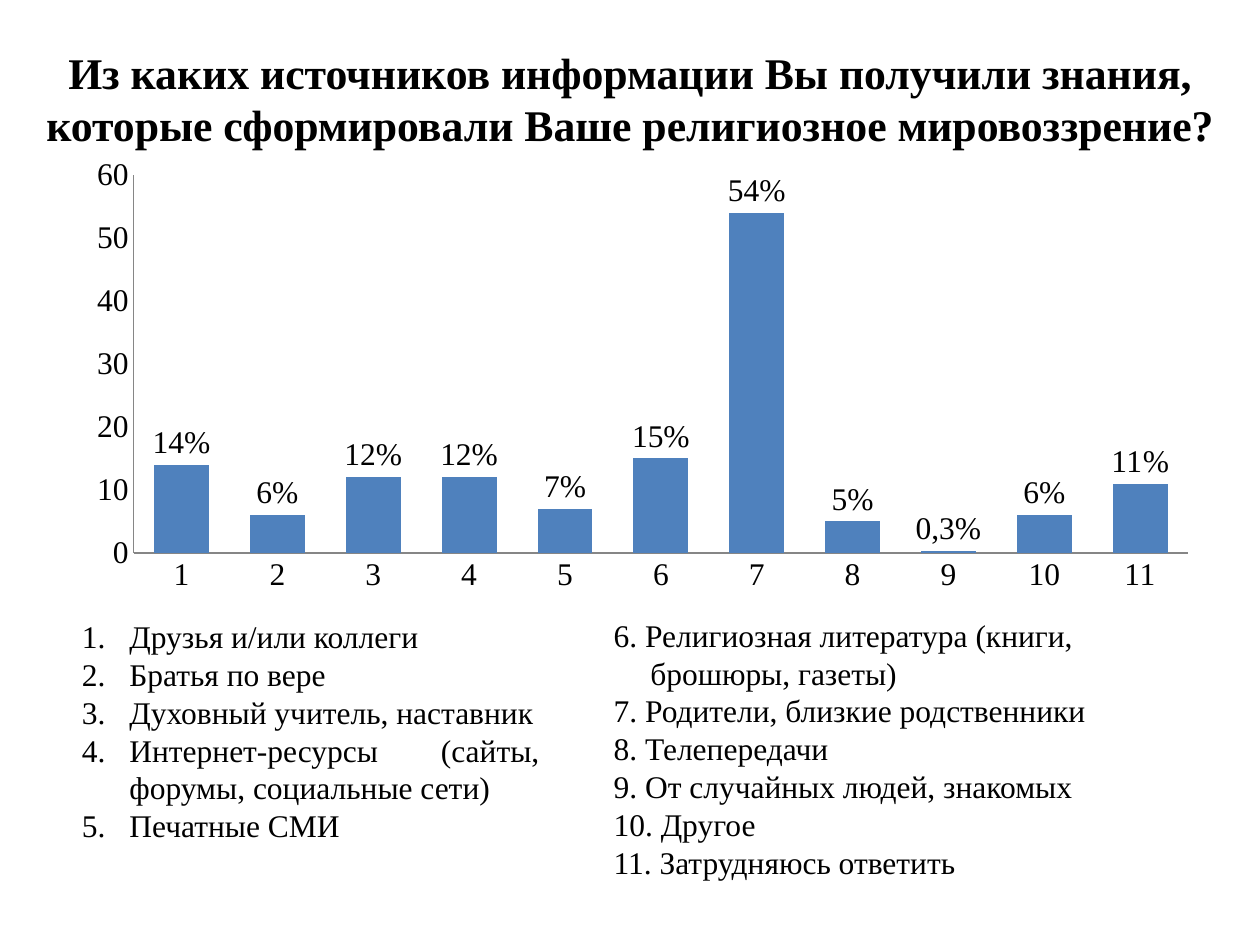
from dataclasses import dataclass

from lxml import etree
from pptx import Presentation
from pptx.chart.data import CategoryChartData
from pptx.dml.color import RGBColor
from pptx.enum.chart import XL_CHART_TYPE, XL_LABEL_POSITION, XL_TICK_MARK
from pptx.enum.text import MSO_ANCHOR, PP_ALIGN
from pptx.oxml.ns import qn
from pptx.util import Cm, Pt

COLUMNS = XL_CHART_TYPE.COLUMN_CLUSTERED
OUTSIDE = XL_LABEL_POSITION.OUTSIDE_END
NO_TICKS = XL_TICK_MARK.NONE
TOP, MIDDLE = MSO_ANCHOR.TOP, MSO_ANCHOR.MIDDLE
LEFT, CENTER, JUSTIFY = PP_ALIGN.LEFT, PP_ALIGN.CENTER, PP_ALIGN.JUSTIFY


@dataclass(frozen=True)
class Theme:
    font: str = "Times New Roman"
    title_size: Pt = Pt(25)
    body_size: Pt = Pt(18)
    text: RGBColor = RGBColor(0, 0, 0)
    bar: RGBColor = RGBColor(0x4F, 0x81, 0xBD)
    axis: RGBColor = RGBColor(0x86, 0x86, 0x86)


THEME = Theme()

TITLE = [
    "Из каких источников информации Вы получили знания,",
    "которые сформировали Ваше религиозное мировоззрение?",
]
SHARES = [14, 6, 12, 12, 7, 15, 54, 5, 0.3, 6, 11]
FIRST_SOURCES = [
    "Друзья и/или коллеги",
    "Братья по вере",
    "Духовный учитель, наставник",
    "Интернет-ресурсы (сайты, форумы, социальные сети)",
    "Печатные СМИ",
]
OTHER_SOURCES = [
    "6. Религиозная литература (книги, брошюры, газеты)",
    "7. Родители, близкие родственники",
    "8. Телепередачи",
    "9. От случайных людей, знакомых",
    "10. Другое",
    "11. Затрудняюсь ответить",
]


def style_font(font, size, bold=False):
    font.name = THEME.font
    font.size = size
    font.bold = bold
    font.color.rgb = THEME.text


def add_text(page, place, lines, size, align, anchor=TOP, bold=False):
    """Add a text box with one paragraph per line and return its paragraphs."""
    frame = page.shapes.add_textbox(*place).text_frame
    frame.word_wrap = True
    frame.vertical_anchor = anchor
    for index, line in enumerate(lines):
        para = frame.paragraphs[0] if index == 0 else frame.add_paragraph()
        para.alignment = align
        span = para.add_run()
        span.text = line
        style_font(span.font, size, bold)
    return frame.paragraphs


def hang(para, indent, numbered=False):
    """Give a paragraph a hanging indent, with automatic numbers if wanted."""
    properties = para._p.get_or_add_pPr()
    properties.set("marL", str(indent))
    properties.set("indent", str(-indent))
    if numbered:
        etree.SubElement(properties, qn("a:buFont"), typeface="+mj-lt")
        etree.SubElement(properties, qn("a:buAutoNum"), type="arabicPeriod")


def style_axis(axis):
    axis.has_major_gridlines = False
    axis.major_tick_mark = NO_TICKS
    axis.minor_tick_mark = NO_TICKS
    axis.format.line.color.rgb = THEME.axis
    axis.format.line.width = Pt(0.75)


def add_share_chart(page, place):
    data = CategoryChartData()
    data.categories = [str(number) for number in range(1, len(SHARES) + 1)]
    data.add_series("Series 1", SHARES)
    chart = page.shapes.add_chart(COLUMNS, *place, data).chart
    chart.has_legend = False
    chart.has_title = False
    style_font(chart.font, THEME.body_size)

    style_axis(chart.category_axis)
    style_axis(chart.value_axis)
    chart.value_axis.minimum_scale = 0
    chart.value_axis.maximum_scale = 60
    chart.value_axis.major_unit = 10

    plot = chart.plots[0]
    plot.gap_width = 75
    plot.vary_by_categories = False
    series = plot.series[0]
    series.format.fill.solid()
    series.format.fill.fore_color.rgb = THEME.bar
    series.data_labels.show_value = True
    series.data_labels.position = OUTSIDE
    for index, share in enumerate(SHARES):
        label = series.points[index].data_label
        span = label.text_frame.paragraphs[0].add_run()
        span.text = f"{share}%".replace(".", ",")
        style_font(span.font, THEME.body_size)
        label.position = OUTSIDE


def main():
    deck = Presentation()
    deck.slide_width, deck.slide_height = Cm(25.4), Cm(19.05)
    page = deck.slides.add_slide(deck.slide_layouts[6])

    add_text(page, (Cm(0), Cm(0.79), Cm(25.4), Cm(2.39)), TITLE,
             THEME.title_size, CENTER, bold=True)
    add_share_chart(page, (Cm(1.5), Cm(3), Cm(22.91), Cm(9.12)))

    numbered = add_text(page, (Cm(1.4), Cm(12.29), Cm(9.73), Cm(4.88)),
                        FIRST_SOURCES, THEME.body_size, JUSTIFY, MIDDLE)
    for para in numbered:
        hang(para, Cm(0.96), numbered=True)

    others = add_text(page, (Cm(12.12), Cm(12.29), Cm(11.71), Cm(5.64)),
                      OTHER_SOURCES, THEME.body_size, JUSTIFY)
    others[0].alignment = LEFT
    for para in others:
        hang(para, Cm(0.74))

    deck.save("out.pptx")


if __name__ == "__main__":
    main()
